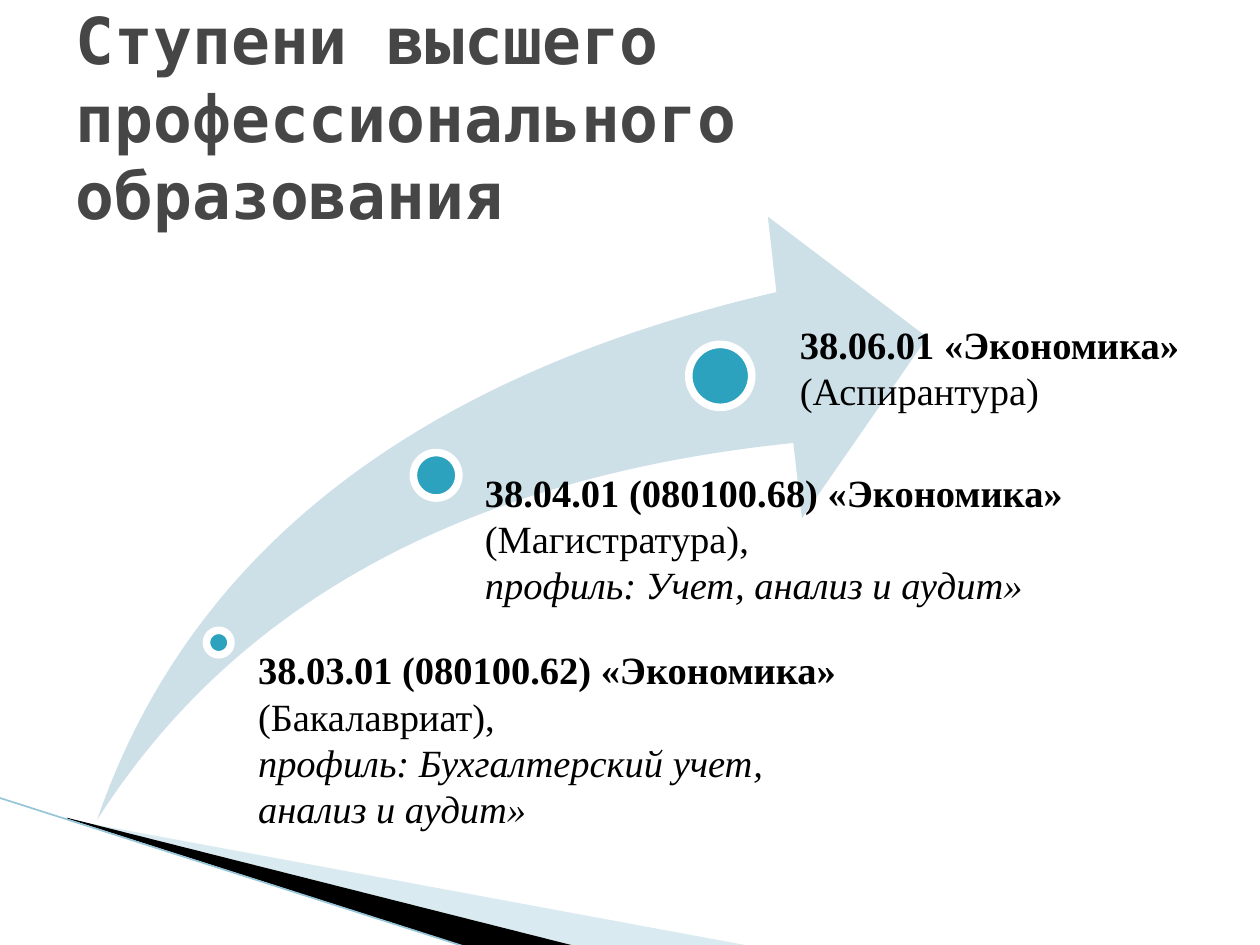
from typing import NamedTuple

from lxml import etree
from pptx import Presentation
from pptx.dml.color import RGBColor
from pptx.enum import shapes, text
from pptx.oxml.ns import qn
from pptx.util import Pt

COLORS = {
    "title": "464646", "body": "000000", "arrow": "CDE0E8", "dot": "2DA2BF",
    "ring": "FFFFFF", "wedge": "A0CBDC", "shade": "000000", "edge": "97C5D8",
}
TITLE_FONT = "DejaVu Sans Mono"
BODY_FONT = "Times New Roman"


class Stage(NamedTuple):
    """A step of education: its dot on the arrow and its label box."""
    dot: tuple[float, float, float]  # left, top, diameter
    box: tuple[float, float, float, float]
    program: str
    degree: str
    profile: str = ""


STAGES = [
    Stage((118, 360.2, 14), (140.4, 365.8, 348.5, 140.4),
          "38.03.01 (080100.62) «Экономика» ", "(Бакалавриат),",
          "профиль: Бухгалтерский учет, анализ и аудит»"),
    Stage((236.2, 258.6, 26), (270, 264.2, 382.3, 113.8),
          "38.04.01 (080100.68) «Экономика» ", "(Магистратура),",
          "профиль: Учет, анализ и аудит»"),
    Stage((393.6, 196.8, 36), (450, 180, 326.2, 60.5),
          "38.06.01 «Экономика» ", "(Аспирантура)"),
]


def color(name: str) -> RGBColor:
    return RGBColor.from_string(COLORS[name])


def points(values) -> list[int]:
    return [Pt(value) for value in values]


def fill_shape(shape, name: str, alpha: int = 100) -> None:
    shape.shadow.inherit = False
    shape.fill.solid()
    shape.fill.fore_color.rgb = color(name)
    shape.line.fill.background()
    if alpha < 100:
        rgb = shape.fill._xPr.find(".//" + qn("a:srgbClr"))
        etree.SubElement(rgb, qn("a:alpha"), val=str(alpha * 1000))


def add_run(paragraph, words: str, *, font: str = BODY_FONT, size: float = 22,
            ink: str = "body", bold: bool = False, italic: bool = False) -> None:
    run = paragraph.add_run()
    run.text = words
    run.font.name, run.font.size = font, Pt(size)
    run.font.bold, run.font.italic = bold, italic
    run.font.color.rgb = color(ink)


def add_wedge(slide, corners: list[tuple[float, float]], name: str, alpha: int = 100) -> None:
    start, *rest = [tuple(points(corner)) for corner in corners]
    builder = slide.shapes.build_freeform(*start)
    builder.add_line_segments(rest, close=True)
    fill_shape(builder.convert_to_shape(), name, alpha)


def add_corner_decoration(slide) -> None:
    add_wedge(slide, [(39.6, 468.5), (428.4, 540.5), (328.3, 540.5), (39.6, 468)], "wedge", 40)
    add_wedge(slide, [(38.2, 467.3), (329, 540.7), (267.8, 541.4), (38.9, 468)], "shade")
    edge = slide.shapes.add_connector(
        shapes.MSO_CONNECTOR.STRAIGHT, *points((-0.7, 455.8, 267.1, 541.4)))
    edge.line.color.rgb = color("edge")
    edge.line.width = Pt(0.95)
    etree.SubElement(edge._element.spPr, qn("a:effectLst"))


def add_arrow(slide) -> None:
    arrow = slide.shapes.add_shape(
        shapes.MSO_SHAPE.SWOOSH_ARROW, *points((55.4, 123.8, 474.5, 344.9)))
    arrow.adjustments[0] = arrow.adjustments[1] = 0.25
    fill_shape(arrow, "arrow")


def add_dot(slide, stage: Stage) -> None:
    left, top, size = stage.dot
    dot = slide.shapes.add_shape(shapes.MSO_SHAPE.OVAL, *points((left, top, size, size)))
    fill_shape(dot, "dot")
    dot.line.color.rgb = color("ring")
    dot.line.width = Pt(4.33)


def add_label(slide, stage: Stage) -> None:
    frame = slide.shapes.add_textbox(*points(stage.box)).text_frame
    frame.word_wrap = True
    heading = frame.paragraphs[0]
    add_run(heading, stage.program, bold=True)
    add_run(heading, stage.degree)
    if stage.profile:
        add_run(frame.add_paragraph(), stage.profile, italic=True)


def format_title(slide) -> None:
    title = slide.shapes.title
    title.left, title.top, title.width, title.height = points((36, 21.6, 648, 90))
    frame = title.text_frame
    frame.word_wrap = True
    frame.auto_size = text.MSO_AUTO_SIZE.NONE
    frame.vertical_anchor = text.MSO_ANCHOR.MIDDLE
    paragraph = frame.paragraphs[0]
    paragraph.alignment = text.PP_ALIGN.LEFT
    add_run(paragraph, "Ступени высшего профессионального образования",
            font=TITLE_FONT, size=36.9, ink="title", bold=True)


def main() -> None:
    deck = Presentation()
    deck.slide_width, deck.slide_height = Pt(720), Pt(540)
    slide = deck.slides.add_slide(deck.slide_layouts[5])
    format_title(slide)
    add_corner_decoration(slide)
    add_arrow(slide)
    for stage in STAGES:
        add_dot(slide, stage)
    for stage in STAGES:
        add_label(slide, stage)
    deck.save("out.pptx")


if __name__ == "__main__":
    main()
